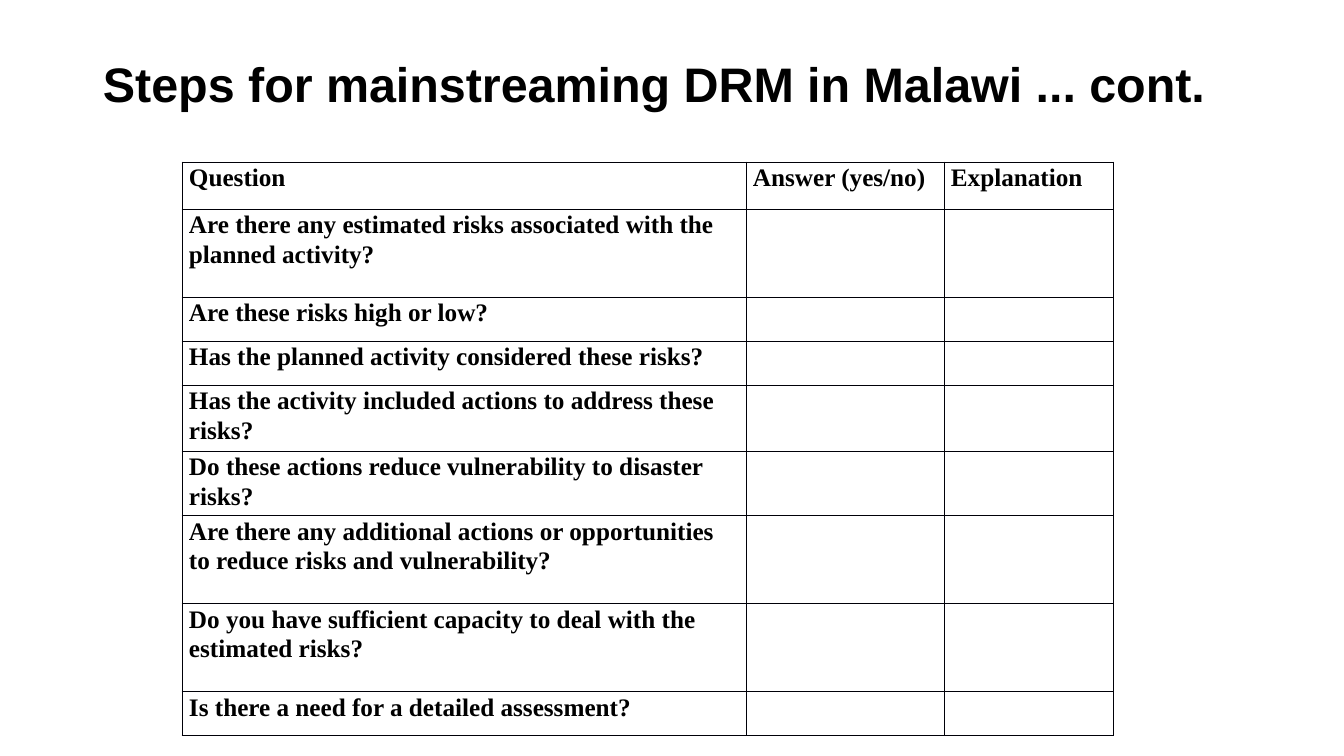
import pptx
import pptx.util
import pptx.dml.color
import pptx.enum.text
import lxml.etree
from pptx.oxml.ns import qn

TITLE = "Steps for mainstreaming DRM in Malawi ... cont."
HEADERS = ["Question", "Answer (yes/no)", "Explanation"]
# Each question with the height of its row
QUESTIONS = [
    ("Are there any estimated risks associated with the planned activity?", 88),
    ("Are these risks high or low?", 44),
    ("Has the planned activity considered these risks?", 44),
    ("Has the activity included actions to address these risks?", 66),
    ("Do these actions reduce vulnerability to disaster risks?", 59),
    ("Are there any additional actions or opportunities to reduce risks and vulnerability?", 88),
    ("Do you have sufficient capacity to deal with the estimated risks?", 88),
    ("Is there a need for a detailed assessment?", 44),
]
HEADER_HEIGHT = 47
COL_WIDTHS = [564, 198, 169]
TABLE_LEFT, TABLE_TOP = 182, 162
TITLE_BOX = (93, 40, 1159, 93)
BORDER, BLACK = "000008", "000000"


def px(n):
    return pptx.util.Emu(round(n * 914400 / 100.8))


def color(value):
    return pptx.dml.color.RGBColor.from_string(value)


def write(tf, text, font, size, spacing, bold=True, fill=BLACK):
    tf.word_wrap = True
    p = tf.paragraphs[0]
    p.line_spacing = spacing
    r = p.add_run()
    r.text = text
    r.font.name, r.font.size, r.font.bold = font, pptx.util.Pt(size), bold
    r.font.color.rgb = color(fill)


def add_borders(cell, value, width):
    tc_pr = cell._tc.get_or_add_tcPr()
    for i, side in enumerate(("a:lnL", "a:lnR", "a:lnT", "a:lnB")):
        ln = lxml.etree.Element(qn(side), w=str(pptx.util.Pt(width)))
        fill = lxml.etree.SubElement(ln, qn("a:solidFill"))
        lxml.etree.SubElement(fill, qn("a:srgbClr"), val=value)
        tc_pr.insert(i, ln)


prs = pptx.Presentation()
prs.slide_width, prs.slide_height = px(1344), px(756)
s = prs.slides.add_slide(prs.slide_layouts[6])

# Title
tf = s.shapes.add_textbox(*map(px, TITLE_BOX)).text_frame
tf.vertical_anchor = pptx.enum.text.MSO_ANCHOR.MIDDLE
write(tf, TITLE, "Arial", 34.6, 0.9)

# Table
rows = [HEADERS] + [[question, "", ""] for question, _ in QUESTIONS]
heights = [HEADER_HEIGHT] + [height for _, height in QUESTIONS]
table = s.shapes.add_table(
    len(rows), len(HEADERS), px(TABLE_LEFT), px(TABLE_TOP),
    px(sum(COL_WIDTHS)), px(sum(heights))).table
table.first_row = table.horz_banding = False
for col, width in zip(table.columns, COL_WIDTHS):
    col.width = px(width)
for row, height, texts in zip(table.rows, heights, rows):
    row.height = px(height)
    for cell, text in zip(row.cells, texts):
        cell.margin_left = cell.margin_right = px(7)
        cell.margin_top = cell.margin_bottom = 0
        cell.fill.background()
        add_borders(cell, BORDER, 0.5)
        if text:
            write(cell.text_frame, text, "Times New Roman", 18, 1.07)

prs.save("out.pptx")
